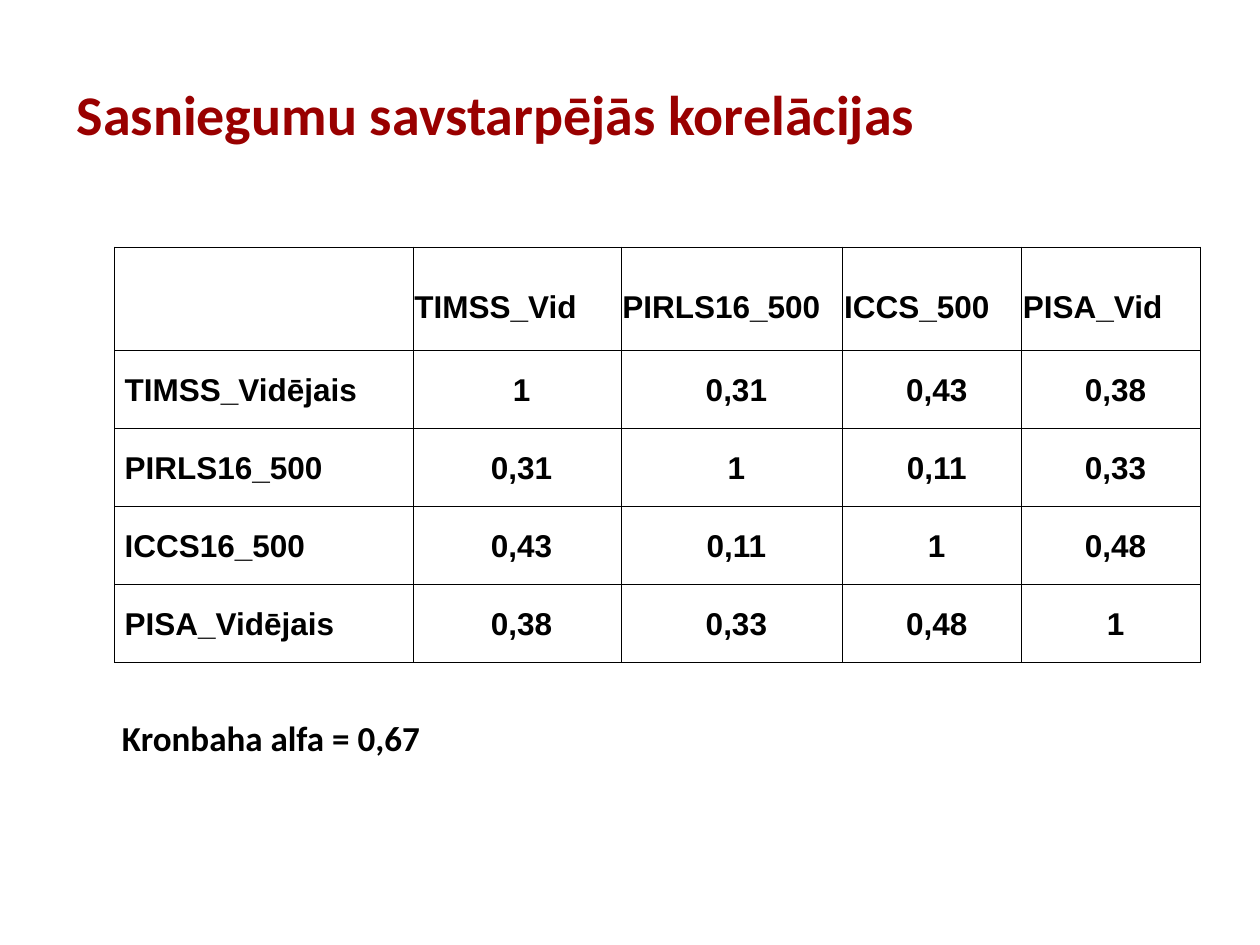
import pptx
import pptx.dml.color
import pptx.enum.text
import pptx.oxml.ns
import pptx.util
from lxml import etree
from pptx.util import Inches

COLORS = {"title": "990000", "text": "000000", "border": "000000"}
ANCHOR = pptx.enum.text.MSO_ANCHOR
ALIGN = pptx.enum.text.PP_ALIGN

STUDIES = ["TIMSS_Vid", "PIRLS16_500", "ICCS_500", "PISA_Vid"]
CORRELATIONS = [
    ["TIMSS_Vidējais", "1", "0,31", "0,43", "0,38"],
    ["PIRLS16_500", "0,31", "1", "0,11", "0,33"],
    ["ICCS16_500", "0,43", "0,11", "1", "0,48"],
    ["PISA_Vidējais", "0,38", "0,33", "0,48", "1"],
]
COLUMN_WIDTHS = [2.37, 1.65, 1.76, 1.42, 1.42]
ROW_HEIGHTS = [0.82] + [0.62] * len(CORRELATIONS)
HEADER_MARGINS = (0.01, 0.01, 0.01, 0)
BODY_MARGINS = (0.08, 0.04, 0.01, 0.04)


def style_paragraph(paragraph, font_name, size, color, line_spacing):
    paragraph.line_spacing = line_spacing
    font = paragraph.font
    font.name = font_name
    font.size = pptx.util.Pt(size)
    font.bold = True
    font.color.rgb = pptx.dml.color.RGBColor.from_string(COLORS[color])


def add_text(slide, box, text, size, color, line_spacing=1.0, wrap=True, anchor=ANCHOR.TOP):
    frame = slide.shapes.add_textbox(*map(Inches, box)).text_frame
    frame.word_wrap = wrap
    frame.vertical_anchor = anchor
    frame.text = text
    style_paragraph(frame.paragraphs[0], "Calibri", size, color, line_spacing)


def add_borders(cell, width=0.5):
    properties = cell._tc.get_or_add_tcPr()
    qn = pptx.oxml.ns.qn
    for side in ("a:lnL", "a:lnR", "a:lnT", "a:lnB"):
        line = etree.SubElement(properties, qn(side), w=str(pptx.util.Pt(width)))
        fill = etree.SubElement(line, qn("a:solidFill"))
        etree.SubElement(fill, qn("a:srgbClr"), val=COLORS["border"])


def fill_cell(cell, text, is_header, is_centred):
    add_borders(cell)
    cell.fill.background()
    margins = HEADER_MARGINS if is_header else BODY_MARGINS
    (cell.margin_left, cell.margin_top,
     cell.margin_right, cell.margin_bottom) = map(Inches, margins)
    cell.vertical_anchor = ANCHOR.MIDDLE if is_header else ANCHOR.TOP
    cell.text = text
    paragraph = cell.text_frame.paragraphs[0]
    paragraph.alignment = ALIGN.CENTER if is_centred else ALIGN.LEFT
    style_paragraph(paragraph, "Arial", 18, "text", 1.5)


def add_correlation_table(slide, left, top):
    rows = [[""] + STUDIES] + CORRELATIONS
    table = slide.shapes.add_table(
        len(rows), len(COLUMN_WIDTHS), Inches(left), Inches(top),
        Inches(sum(COLUMN_WIDTHS)), Inches(sum(ROW_HEIGHTS))).table
    table.first_row = table.horz_banding = False
    for column, width in zip(table.columns, COLUMN_WIDTHS):
        column.width = Inches(width)
    for row, height in zip(table.rows, ROW_HEIGHTS):
        row.height = Inches(height)
    for r, values in enumerate(rows):
        for c, value in enumerate(values):
            fill_cell(table.cell(r, c), value, r == 0, r > 0 and c > 0)


def main():
    presentation = pptx.Presentation()
    presentation.slide_width = Inches(10)
    presentation.slide_height = Inches(7.5)
    slide = presentation.slides.add_slide(presentation.slide_layouts[6])
    add_text(slide, (0.51, 0.21, 8.62, 1.45), "Sasniegumu savstarpējās korelācijas",
             32, "title", line_spacing=0.9, anchor=ANCHOR.MIDDLE)
    add_text(slide, (0.87, 5.64, 2.93, 0.44), "Kronbaha alfa = 0,67", 20, "text", wrap=False)
    add_correlation_table(slide, 0.91, 1.96)
    presentation.save("out.pptx")


if __name__ == "__main__":
    main()
